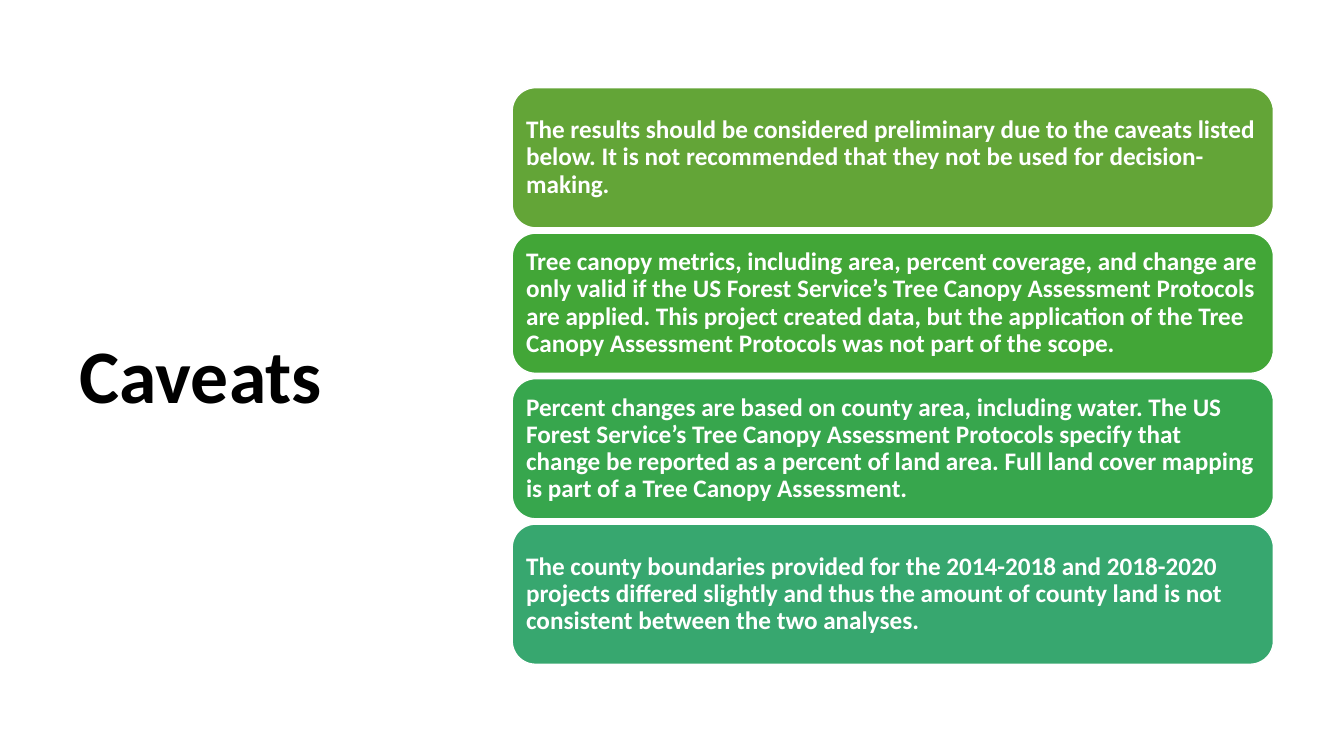
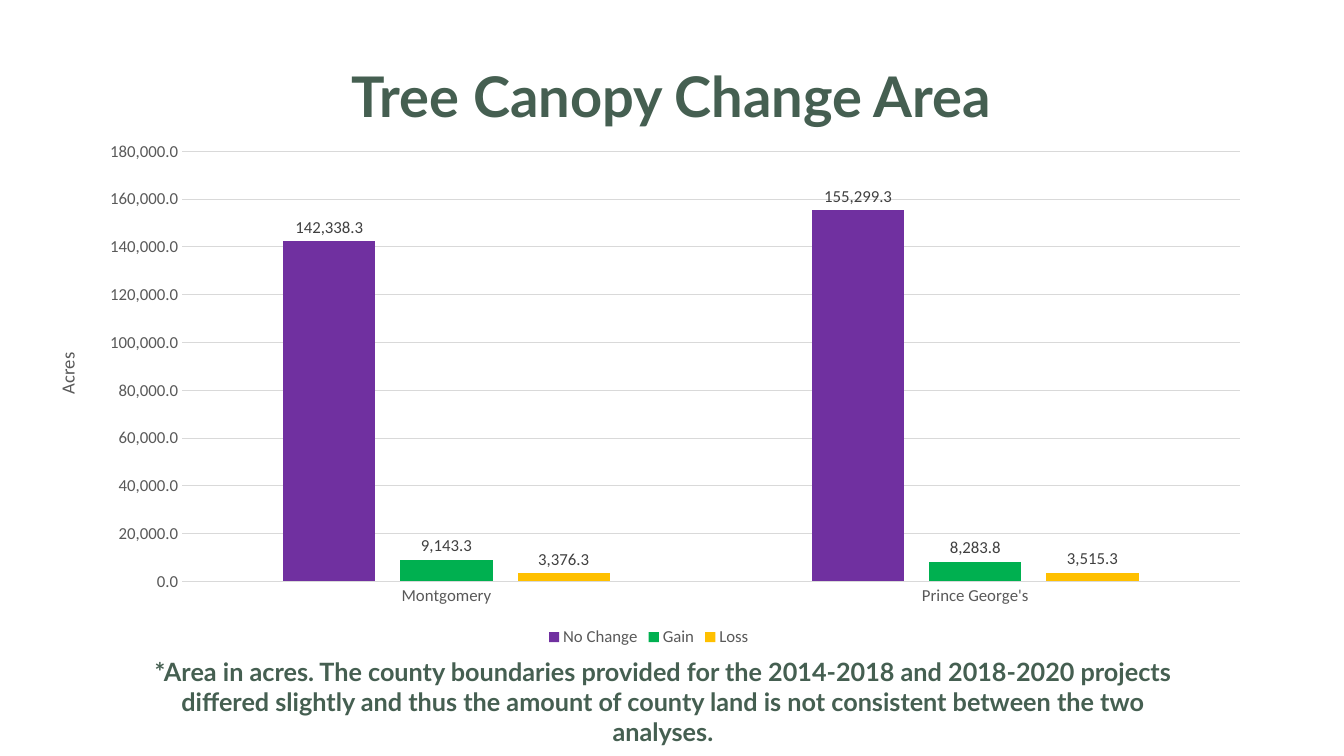
from pptx import Presentation
from pptx.chart.data import CategoryChartData
from pptx.dml.color import RGBColor
from pptx.enum.chart import XL_CHART_TYPE, XL_LABEL_POSITION, XL_LEGEND_POSITION, XL_TICK_MARK
from pptx.enum.shapes import MSO_SHAPE
from pptx.enum.text import MSO_ANCHOR, MSO_AUTO_SIZE, PP_ALIGN
from pptx.util import Inches, Pt

COLORS = {
    "black": "000000", "white": "FFFFFF", "forest": "455F51",
    "axis": "595959", "label": "404040", "grid": "D9D9D9",
    "card1": "63A537", "card2": "42A637", "card3": "37A64D", "card4": "37A76F",
    "no_change": "7030A0", "gain": "00B050", "loss": "FFC000",
}
BODY_FONT = "Calibri"
ACCENT_FONT = "Lato"
NUMBER_FORMAT = "#,##0.0"

CAVEATS = [
    "The results should be considered preliminary due to the caveats listed below. "
    "It is not recommended that they not be used for decision-making.",
    "Tree canopy metrics, including area, percent coverage, and change are only valid if "
    "the US Forest Service’s Tree Canopy Assessment Protocols are applied. This project "
    "created data, but the application of the Tree Canopy Assessment Protocols was not "
    "part of the scope.",
    "Percent changes are based on county area, including water. The US Forest Service’s "
    "Tree Canopy Assessment Protocols specify that change be reported as a percent of land "
    "area. Full land cover mapping is part of a Tree Canopy Assessment.",
    "The county boundaries provided for the 2014-2018 and 2018-2020 projects differed "
    "slightly and thus the amount of county land is not consistent between the two analyses.",
]
COUNTIES = ["Montgomery", "Prince George's"]
CANOPY_CHANGE = [
    ("No Change", [142338.3, 155299.3], "no_change"),
    ("Gain", [9143.3, 8283.8], "gain"),
    ("Loss", [3376.3, 3515.3], "loss"),
]


def rgb(name):
    return RGBColor.from_string(COLORS[name])


def style_font(font, size, color, name=BODY_FONT, bold=False):
    font.size = Pt(size)
    font.name = name
    font.bold = bold
    font.color.rgb = rgb(color)


def write_text(sp, text, size, color, name=BODY_FONT, align=PP_ALIGN.LEFT,
               anchor=MSO_ANCHOR.TOP, spacing=1.0):
    """Fill a shape with one bold paragraph."""
    tf = sp.text_frame
    tf.text = text
    tf.word_wrap = True
    tf.auto_size = MSO_AUTO_SIZE.NONE
    tf.vertical_anchor = anchor
    p = tf.paragraphs[0]
    p.alignment = align
    p.line_spacing = spacing
    style_font(p.runs[0].font, size, color, name, bold=True)


def add_titled_slide(prs, title, left, top, width, height, size, color, **text_style):
    slide = prs.slides.add_slide(prs.slide_layouts.get_by_name("Title Only"))
    sp = slide.shapes.title
    sp.left, sp.top = Inches(left), Inches(top)
    sp.width, sp.height = Inches(width), Inches(height)
    write_text(sp, title, size, color, **text_style)
    return slide


def add_card(slide, text, top, height, color):
    sp = slide.shapes.add_shape(MSO_SHAPE.ROUNDED_RECTANGLE, Inches(5.08), Inches(top),
                                Inches(7.55), Inches(height))
    sp.shadow.inherit = False
    sp.fill.solid()
    sp.fill.fore_color.rgb = rgb(color)
    sp.line.color.rgb = rgb("white")
    sp.line.width = Pt(1)
    # The rounded corners already add 0.07 inch to the text inset.
    tf = sp.text_frame
    tf.margin_left = tf.margin_right = Inches(0.07)
    tf.margin_top = tf.margin_bottom = Inches(0.07)
    write_text(sp, text, 18, "white", anchor=MSO_ANCHOR.MIDDLE, spacing=0.9)


def add_card_stack(slide, texts, top, total_height, card_height):
    pitch = (total_height - card_height) / (len(texts) - 1)
    for i, text in enumerate(texts):
        add_card(slide, text, top + i * pitch, card_height, f"card{i + 1}")


def style_axes(chart):
    for axis in (chart.category_axis, chart.value_axis):
        axis.major_tick_mark = axis.minor_tick_mark = XL_TICK_MARK.NONE
        style_font(axis.tick_labels.font, 12, "axis")
    line = chart.category_axis.format.line
    line.color.rgb = rgb("grid")
    line.width = Pt(0.75)

    values = chart.value_axis
    values.minimum_scale, values.maximum_scale, values.major_unit = 0, 180000, 20000
    values.format.line.fill.background()
    values.major_gridlines.format.line.color.rgb = rgb("grid")
    values.major_gridlines.format.line.width = Pt(0.75)
    values.tick_labels.number_format = NUMBER_FORMAT
    values.tick_labels.number_format_is_linked = False
    tf = values.axis_title.text_frame
    tf.text = "Acres"
    style_font(tf.paragraphs[0].runs[0].font, 13.3, "axis")


def style_series(series, color):
    series.format.fill.solid()
    series.format.fill.fore_color.rgb = rgb(color)
    series.invert_if_negative = False
    labels = series.data_labels
    labels.show_value = True
    labels.position = XL_LABEL_POSITION.OUTSIDE_END
    labels.number_format = NUMBER_FORMAT
    labels.number_format_is_linked = False
    style_font(labels.font, 12, "label")


def add_column_chart(slide, left, top, width, height):
    data = CategoryChartData(number_format=NUMBER_FORMAT)
    data.categories = COUNTIES
    for name, values, _ in CANOPY_CHANGE:
        data.add_series(name, values)
    chart = slide.shapes.add_chart(XL_CHART_TYPE.COLUMN_CLUSTERED, Inches(left), Inches(top),
                                   Inches(width), Inches(height), data).chart
    style_font(chart.font, 10, "black")
    chart.has_title = False
    chart.has_legend = True
    chart.legend.position = XL_LEGEND_POSITION.BOTTOM
    chart.legend.include_in_layout = False
    style_font(chart.legend.font, 12, "axis")
    style_axes(chart)

    plot = chart.plots[0]
    plot.gap_width = 219
    plot.overlap = -27
    plot.vary_by_categories = False
    for series, (_, _, color) in zip(plot.series, CANOPY_CHANGE):
        style_series(series, color)


def add_caption(slide, text, left, top, width, height):
    sp = slide.shapes.add_textbox(Inches(left), Inches(top), Inches(width), Inches(height))
    write_text(sp, text, 18, "forest", ACCENT_FONT, PP_ALIGN.CENTER)


def main():
    prs = Presentation()
    prs.slide_width, prs.slide_height = Inches(13.33), Inches(7.5)

    slide = add_titled_slide(prs, "Caveats", 0.69, 0.7, 3.74, 6.11, 54, "black",
                             anchor=MSO_ANCHOR.MIDDLE, spacing=0.9)
    add_card_stack(slide, CAVEATS, top=0.87, total_height=5.72, card_height=1.39)

    slide = add_titled_slide(prs, "Tree Canopy Change Area", 3.18, 0.56, 6.96, 0.77, 40,
                             "forest", name=ACCENT_FONT, align=PP_ALIGN.CENTER)
    add_caption(slide, "*Area in acres. " + CAVEATS[-1], 1.32, 6.46, 10.51, 1.01)
    add_column_chart(slide, 0.33, 1.3, 12.21, 5.16)

    prs.save("out.pptx")


if __name__ == "__main__":
    main()
